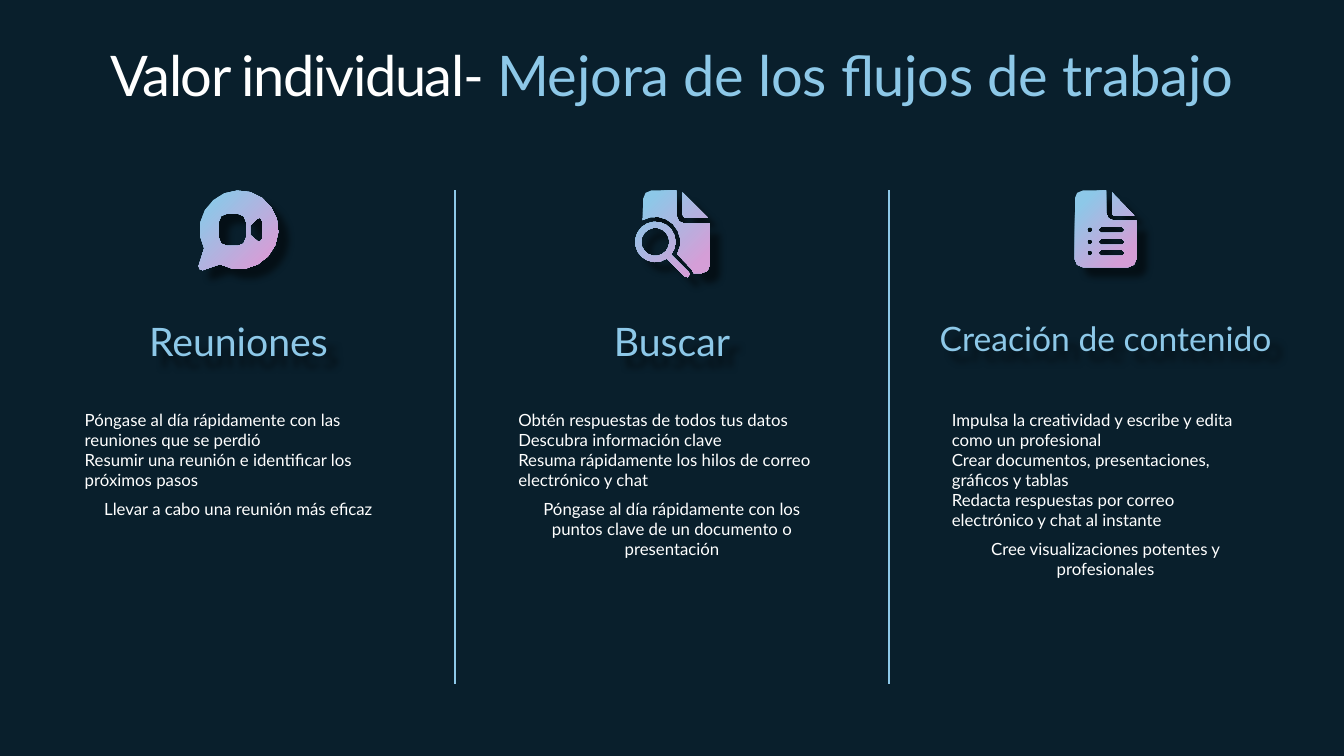
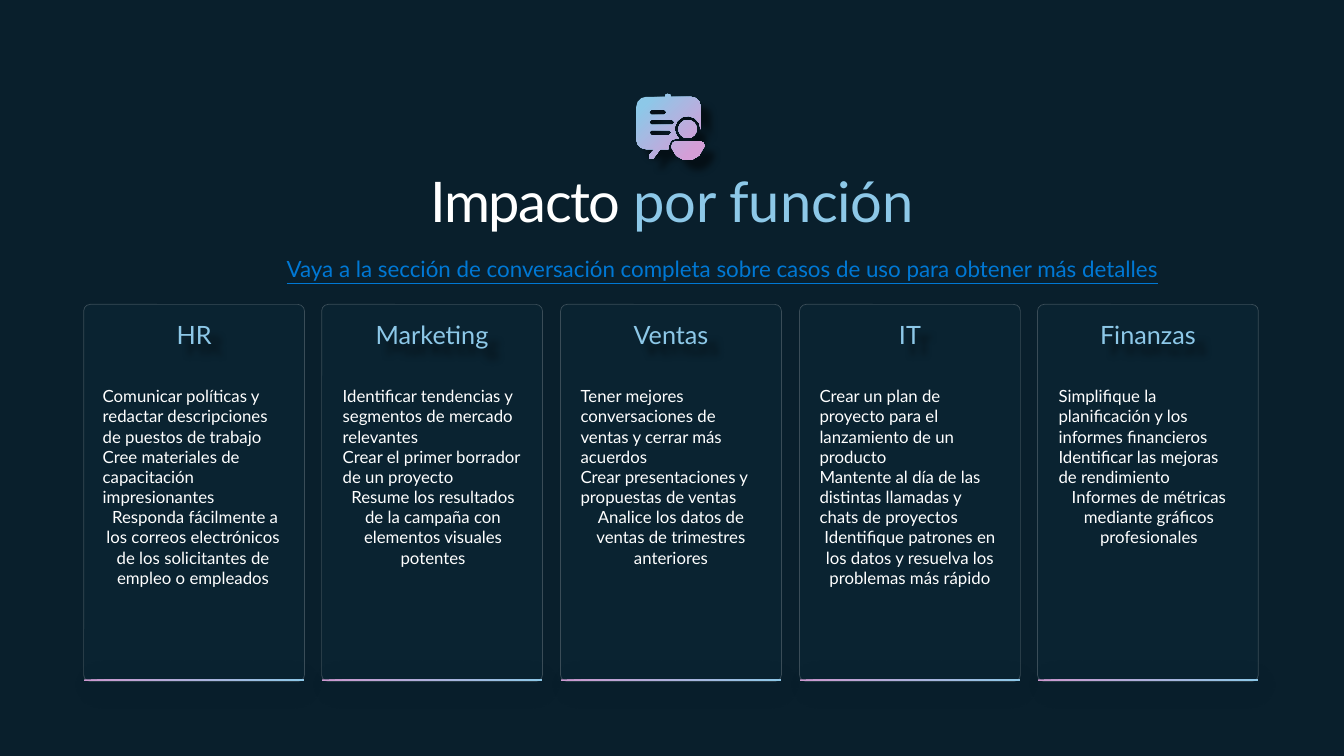
import math
from dataclasses import dataclass

import pptx
import pptx.dml.color
import pptx.enum.shapes
import pptx.enum.text
import pptx.oxml.ns
import pptx.util
from lxml import etree

Inches, Pt, RGBColor = pptx.util.Inches, pptx.util.Pt, pptx.dml.color.RGBColor
ALIGN, ANCHOR = pptx.enum.text.PP_ALIGN, pptx.enum.text.MSO_ANCHOR
qn = pptx.oxml.ns.qn

# Shared look
FONT = "Lato"
NAVY = RGBColor(0x09, 0x1F, 0x2C)
WHITE = RGBColor(0xFF, 0xFF, 0xFF)
SKY = RGBColor(0x8D, 0xC8, 0xE8)
PINK = RGBColor(0xD5, 0x9E, 0xD7)
MAUVE = RGBColor(0xCD, 0x9A, 0xD0)
CARD = RGBColor(0x15, 0x47, 0x65)
LINK = RGBColor(0x00, 0x78, 0xD4)

Point = tuple[float, float]
Contour = list[Point]
Insets = tuple[float, float, float, float]


@dataclass
class Shadow:
    alpha: int
    blur: float
    dist: float


@dataclass
class Topic:
    heading: str
    lines: list[str]
    size: int = 18
    body_height: float = 2.92


DEEP = Shadow(50, 5, 10)
SOFT = Shadow(20, 20, 4)
PLAIN: Insets = (0.1, 0.05, 0.1, 0.05)


# Outlines, in inches and clockwise degrees
def arc(cx: float, cy: float, r: float, start: float, end: float) -> Contour:
    step = 20 if r >= 0.2 else 30 if r > 0.08 else 45 if r > 0.04 else 90
    n = math.ceil(abs(end - start) / step)
    angles = [math.radians(start + (end - start) * i / n) for i in range(n + 1)]
    return [(cx + r * math.cos(a), cy + r * math.sin(a)) for a in angles]


def disc(cx: float, cy: float, r: float) -> Contour:
    n = 18 if r > 0.08 else 6
    angles = [math.tau * i / n for i in range(n)]
    return [(cx + r * math.cos(a), cy + r * math.sin(a)) for a in angles]


def pill(x: float, y: float, w: float, h: float, r: float) -> Contour:
    return (arc(x + r, y + r, r, 180, 270) + arc(x + w - r, y + r, r, 270, 360)
            + arc(x + w - r, y + h - r, r, 0, 90) + arc(x + r, y + h - r, r, 90, 180))


def meeting_icon() -> list[Contour]:
    bubble = arc(2.37, 2.28, 0.39, 152, 479) + [(2.01, 2.68), (1.98, 2.67), (1.97, 2.64)]
    lens = [(2.48, 2.33), (2.48, 2.24), (2.55, 2.17), (2.58, 2.16),
            (2.6, 2.19), (2.6, 2.37), (2.58, 2.4), (2.55, 2.39)]
    return [bubble, pill(2.17, 2.12, 0.27, 0.32, 0.08), lens]


def search_icon() -> list[Contour]:
    glass = arc(6.5, 2.4, 0.2, 55, 399) + [(6.83, 2.7), (6.84, 2.72), (6.82, 2.75), (6.79, 2.74)]
    fold = [(6.77, 1.91), (7.02, 2.16), (6.79, 2.16), (6.77, 2.13)]
    page = ([(6.71, 1.89)] + arc(6.79, 2.14, 0.08, 180, 90) + [(7.04, 2.22)]
            + arc(6.96, 2.63, 0.08, 0, 90) + [(6.88, 2.71), (6.86, 2.67)]
            + arc(6.5, 2.4, 0.25, 29, -120) + arc(6.46, 1.97, 0.08, 180, 270))
    return [glass, disc(6.5, 2.4, 0.14), fold, page]


def document_icon() -> list[Contour]:
    page = ([(10.97, 1.89)] + arc(11.05, 2.11, 0.08, 180, 90) + [(11.27, 2.19)]
            + arc(11.19, 2.57, 0.08, 0, 90) + arc(10.74, 2.57, 0.08, 90, 180)
            + arc(10.74, 1.97, 0.08, 180, 270))
    fold = [(11.03, 1.91), (11.25, 2.14), (11.05, 2.14), (11.03, 2.12)]
    rows = (2.28, 2.4, 2.51)
    return ([page, fold] + [disc(10.81, y, 0.03) for y in rows]
            + [pill(10.89, y - 0.03, 0.27, 0.06, 0.03) for y in rows])


def presenter_icon() -> list[Contour]:
    board = ([(6.6, 0.96), (6.6, 0.94), (6.62, 0.93), (6.65, 0.94), (6.65, 0.96)]
             + arc(6.85, 1.06, 0.1, -90, 0) + arc(6.82, 1.28, 0.13, 0, -227)
             + arc(6.71, 1.45, 0.08, 270, 180)
             + [(6.63, 1.48), (6.55, 1.48), (6.48, 1.57), (6.44, 1.57), (6.44, 1.54), (6.49, 1.48)]
             + arc(6.41, 1.38, 0.1, 90, 180) + arc(6.41, 1.06, 0.1, 180, 270))
    rows = [pill(6.44, y, w, 0.05, 0.02) for y, w in ((1.09, 0.17), (1.19, 0.25), (1.29, 0.22))]
    body = (arc(6.71, 1.45, 0.05, 180, 270) + arc(6.94, 1.45, 0.05, 270, 360)
            + arc(6.82, 1.43, 0.16, 15, 165))
    return [board, *rows, disc(6.82, 1.28, 0.09), body]


# Formatting helpers
def set_shadow(shape, shadow: Shadow) -> None:
    shape.shadow.inherit = False
    effects = shape.element.spPr.find(qn("a:effectLst"))
    outer = etree.SubElement(effects, qn("a:outerShdw"), blurRad=str(Pt(shadow.blur)),
                             dist=str(Pt(shadow.dist)), dir="2700000", algn="tl", rotWithShape="0")
    color = etree.SubElement(outer, qn("a:srgbClr"), val="000000")
    etree.SubElement(color, qn("a:alpha"), val=str(shadow.alpha * 1000))


def set_gradient(shape, start: RGBColor, end: RGBColor, angle: float, stops: Point) -> None:
    shape.fill.gradient()
    shape.fill.gradient_angle = angle
    for stop, color, position in zip(shape.fill.gradient_stops, (start, end), stops):
        stop.color.rgb = color
        stop.position = position
    shape.line.fill.background()


def set_alpha(shape, where: str, percent: int) -> None:
    for color in shape.element.spPr.xpath(where):
        etree.SubElement(color, qn("a:alpha"), val=str(percent * 1000))


def add_run(p, text: str, size: float, color: RGBColor, spacing: float = 0) -> None:
    r = p.add_run()
    r.text = text
    r.font.name, r.font.size, r.font.color.rgb = FONT, Pt(size), color
    if spacing:
        r._r.get_or_add_rPr().set("spc", str(round(spacing * 100)))


def add_box(s, x: float, y: float, w: float, h: float, insets: Insets = (0, 0, 0, 0)):
    sp = s.shapes.add_textbox(Inches(x), Inches(y), Inches(w), Inches(h))
    tf = sp.text_frame
    tf.word_wrap = True
    tf.margin_left, tf.margin_top, tf.margin_right, tf.margin_bottom = map(Inches, insets)
    tf.paragraphs[0].alignment = ALIGN.CENTER
    return sp


# Slide parts
def add_slide(prs):
    s = prs.slides.add_slide(prs.slide_layouts[6])
    s.background.fill.solid()
    s.background.fill.fore_color.rgb = NAVY
    return s


def add_title(s, y: float, lead: str, rest: str) -> None:
    p = add_box(s, 0.64, y, 12.05, 0.67).text_frame.paragraphs[0]
    add_run(p, lead, 40, WHITE, -1)
    add_run(p, rest, 40, SKY, -0.1)


def add_heading(s, topic: Topic, x: float, y: float, w: float, h: float,
                insets: Insets, anchor=ANCHOR.TOP) -> None:
    sp = add_box(s, x, y, w, h, insets)
    sp.text_frame.vertical_anchor = anchor
    add_run(sp.text_frame.paragraphs[0], topic.heading, topic.size, SKY)
    set_shadow(sp, DEEP)


def add_body(s, topic: Topic, x: float, y: float, w: float,
             insets: Insets, last_gap: float) -> None:
    """Left-aligned lines, closed by a centred one."""
    tf = add_box(s, x, y, w, topic.body_height, insets).text_frame
    for i, line in enumerate(topic.lines):
        p = tf.add_paragraph() if i else tf.paragraphs[0]
        p.alignment = ALIGN.LEFT
        add_run(p, line, 12, WHITE)
    p.alignment, p.space_before = ALIGN.CENTER, Pt(last_gap)


def add_icon(s, contours: list[Contour]) -> None:
    builder = None
    for contour in contours:
        points = [(Inches(x), Inches(y)) for x, y in contour]
        if builder is None:
            builder = s.shapes.build_freeform(*points[0])
        else:
            builder.move_to(*points[0])
        builder.add_line_segments(points[1:], close=True)
    sp = builder.convert_to_shape()
    set_gradient(sp, SKY, PINK, 315, (0.14, 0.85))
    set_shadow(sp, DEEP)


def add_divider(s, x: float) -> None:
    c = s.shapes.add_connector(pptx.enum.shapes.MSO_CONNECTOR.STRAIGHT,
                               Inches(x), Inches(1.89), Inches(x), Inches(6.79))
    c.line.color.rgb, c.line.width = SKY, Pt(1.5)
    etree.SubElement(c.element.spPr, qn("a:effectLst"))


def add_round_rect(s, x: float, y: float, w: float, h: float, radius: float):
    sp = s.shapes.add_shape(pptx.enum.shapes.MSO_SHAPE.ROUNDED_RECTANGLE,
                            Inches(x), Inches(y), Inches(w), Inches(h))
    sp.adjustments[0] = radius
    sp.shadow.inherit = False
    return sp


def add_card(s, x: float) -> None:
    card = add_round_rect(s, x, 3.02, 2.19, 3.74, 0.03)
    card.fill.solid()
    card.fill.fore_color.rgb = CARD
    card.line.color.rgb, card.line.width = WHITE, Pt(0.5)
    set_alpha(card, "./a:solidFill/a:srgbClr", 10)
    set_alpha(card, "./a:ln/a:solidFill/a:srgbClr", 20)
    bar = add_round_rect(s, x, 6.74, 2.19, 0.02, 0.5)
    set_gradient(bar, MAUVE, SKY, 0, (0, 1))
    set_shadow(bar, SOFT)


# Content
WORKFLOWS = [
    Topic("Reuniones", [
        "Póngase al día rápidamente con las reuniones que se perdió",
        "Resumir una reunión e identificar los próximos pasos",
        "Llevar a cabo una reunión más eficaz"], 28, 1.71),
    Topic("Buscar", [
        "Obtén respuestas de todos tus datos", "Descubra información clave",
        "Resuma rápidamente los hilos de correo electrónico y chat",
        "Póngase al día rápidamente con los puntos clave de un documento o presentación"], 28, 2.28),
    Topic("Creación de contenido", [
        "Impulsa la creatividad y escribe y edita como un profesional",
        "Crear documentos, presentaciones, gráficos y tablas",
        "Redacta respuestas por correo electrónico y chat al instante",
        "Cree visualizaciones potentes y profesionales"], 24, 2.48),
]
ROLES = [
    Topic("HR", [
        "Comunicar políticas y redactar descripciones de puestos de trabajo",
        "Cree materiales de capacitación impresionantes",
        " Responda fácilmente a los correos electrónicos de los solicitantes de empleo o empleados"]),
    Topic("Marketing", [
        "Identificar tendencias y segmentos de mercado relevantes",
        "Crear el primer borrador de un proyecto",
        "Resume los resultados de la campaña con elementos visuales potentes"]),
    Topic("Ventas", [
        "Tener mejores conversaciones de ventas y cerrar más acuerdos",
        "Crear presentaciones y propuestas de ventas",
        "Analice los datos de ventas de trimestres anteriores"]),
    Topic("IT", [
        "Crear un plan de proyecto para el lanzamiento de un producto",
        "Mantente al día de las distintas llamadas y chats de proyectos",
        "Identifique patrones en los datos y resuelva los problemas más rápido"]),
    Topic("Finanzas", [
        "Simplifique la planificación y los informes financieros",
        "Identificar las mejoras de rendimiento",
        "Informes de métricas mediante gráficos profesionales"], body_height=2.05),
]
CARD_LEFTS = (0.83, 3.19, 5.56, 7.93, 10.29)
BODY_LEFTS = (0.92, 3.3, 5.66, 8.03, 10.4)


def build_workflows(prs) -> None:
    s = add_slide(prs)
    add_title(s, 0.4, "Valor individual- ", "Mejora de los flujos de trabajo")
    icons = (meeting_icon(), search_icon(), document_icon())
    for i, (topic, icon) in enumerate(zip(WORKFLOWS, icons)):
        x = 0.64 + 4.3 * i
        add_icon(s, icon)
        add_heading(s, topic, x, 2.95, 3.45, 0.25 + topic.size / 60, (0, 0.2, 0, 0.05))
        add_body(s, topic, x, 3.86, 3.45, (0.2, 0.2, 0.2, 0.16), 6)
    for i in range(2):
        add_divider(s, 4.51 + 4.31 * i)


def build_roles(prs) -> None:
    s = add_slide(prs)
    for x in CARD_LEFTS:
        add_card(s, x)
    add_title(s, 1.65, "Impacto ", "por función")
    add_icon(s, presenter_icon())
    for topic, x, body_x in zip(ROLES, CARD_LEFTS, BODY_LEFTS):
        add_heading(s, topic, x + 0.1, 3.15, 1.99, 0.37, (0, 0.02, 0, 0.05), ANCHOR.MIDDLE)
        add_body(s, topic, body_x, 3.78, 1.99, PLAIN, 0)
    p = add_box(s, 2.31, 2.48, 9.71, 0.37, PLAIN).text_frame.paragraphs[0]
    add_run(p, "Vaya a la sección de conversación completa sobre casos de uso "
               "para obtener más detalles", 16, LINK)
    p.runs[0].font.underline = True


def main() -> None:
    prs = pptx.Presentation()
    prs.slide_width, prs.slide_height = Inches(13.33), Inches(7.5)
    build_workflows(prs)
    build_roles(prs)
    prs.save("out.pptx")


if __name__ == "__main__":
    main()
